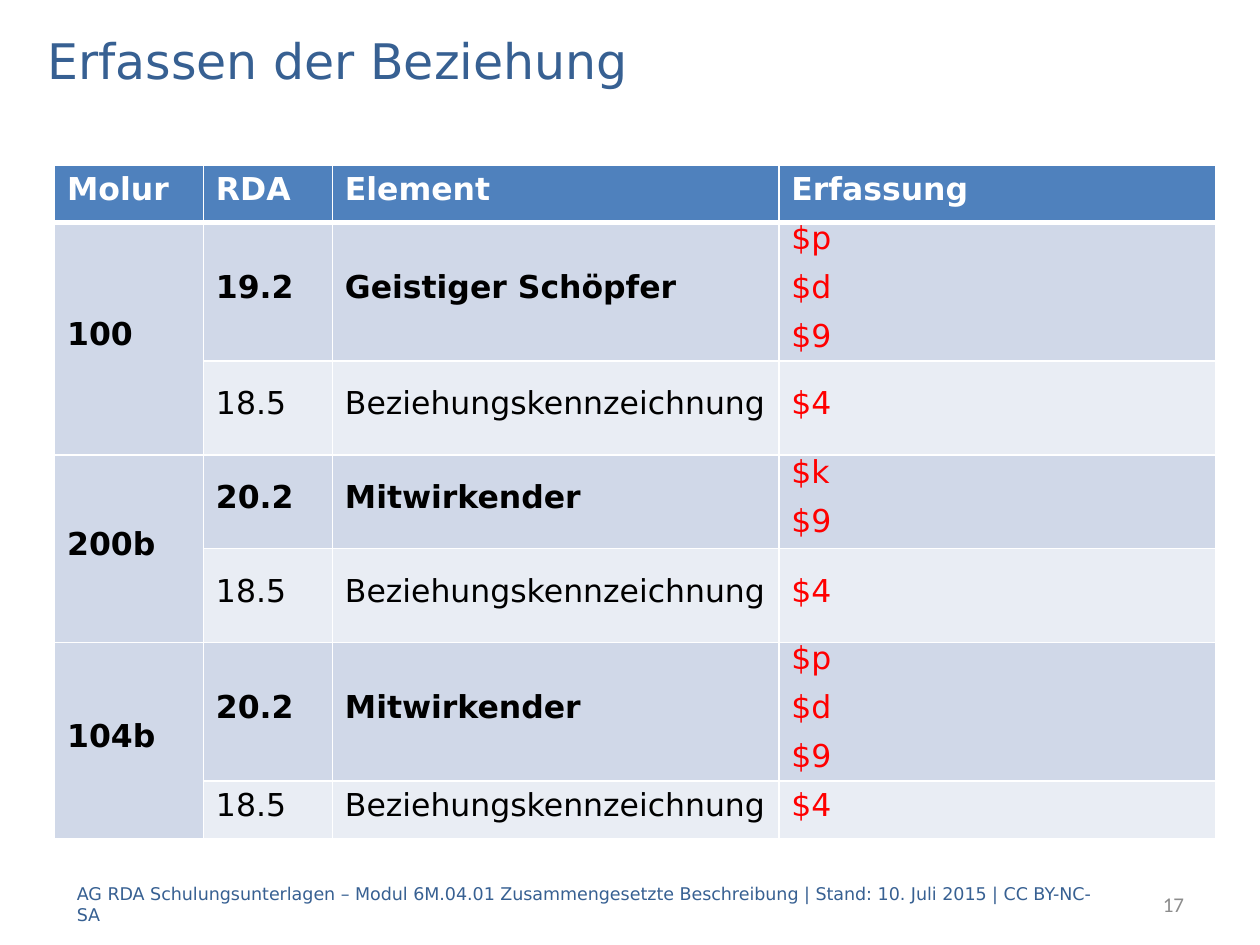
from pptx import Presentation
from pptx.dml.color import RGBColor
from pptx.enum.text import MSO_ANCHOR, PP_ALIGN
from pptx.oxml import parse_xml
from pptx.oxml.ns import nsdecls
from pptx.util import Cm, Pt

SANS = "DejaVu Sans"
NAVY, BLUE, RED = "376092", "4F81BD", "FF0000"
WHITE, BLACK, GREY = "FFFFFF", "000000", "8C8C8C"
DARK, LIGHT = "D0D8E8", "E9EDF4"

HEAD = ["Molur", "RDA", "Element", "Erfassung"]
GROUPS = [
    ("100", "19.2", "Geistiger Schöpfer", "$p\n$d\n$9"),
    ("200b", "20.2", "Mitwirkender", "$k\n$9"),
    ("104b", "20.2", "Mitwirkender", "$p\n$d\n$9"),
]
LINK = ("18.5", "Beziehungskennzeichnung", "$4")
WIDTHS = [3, 2.6, 9, 8.8]
HEIGHTS = [1.16, 2.79, 1.89, 1.89, 1.89, 2.79, 1.17]


def color(code):
    return RGBColor.from_string(code)


def write(frame, text, size=18, font=SANS, ink=BLACK, bold=False,
          align=PP_ALIGN.LEFT, line=None, gap=None):
    frame.word_wrap = True
    for i, part in enumerate(text.split("\n")):
        para = frame.paragraphs[0] if i == 0 else frame.add_paragraph()
        para.alignment = align
        if line:
            para.line_spacing = Pt(line)
        if gap:
            para.space_before = para.space_after = Pt(gap)
        run = para.add_run()
        run.text = part
        run.font.size = Pt(size)
        run.font.name = font
        run.font.bold = bold
        run.font.color.rgb = color(ink)


def label(slide, box, text, **form):
    frame = slide.shapes.add_textbox(*map(Cm, box)).text_frame
    frame.vertical_anchor = MSO_ANCHOR.MIDDLE
    write(frame, text, **form)


def paint(cell, fill, top=1, base=1):
    props = cell._tc.get_or_add_tcPr()
    for side, width in zip("LRTB", (1, 1, top, base)):
        props.append(parse_xml(
            f'<a:ln{side} {nsdecls("a")} w="{Pt(width)}"><a:solidFill>'
            f'<a:srgbClr val="{WHITE}"/></a:solidFill></a:ln{side}>'))
    cell.fill.solid()
    cell.fill.fore_color.rgb = color(fill)


def entry(cell, text, fill, top=1, **form):
    paint(cell, fill, top=top)
    cell.vertical_anchor = MSO_ANCHOR.MIDDLE
    cell.margin_top = cell.margin_bottom = 0
    write(cell.text_frame, text, line=16, gap=6, **form)


def grid(slide, box):
    table = slide.shapes.add_table(
        len(HEIGHTS), len(WIDTHS), *map(Cm, box)).table
    table.horz_banding = False
    for col, width in zip(table.columns, WIDTHS):
        col.width = Cm(width)
    for row, height in zip(table.rows, HEIGHTS):
        row.height = Cm(height)
    for c, text in enumerate(HEAD):
        cell = table.cell(0, c)
        paint(cell, BLUE, base=3)
        write(cell.text_frame, text, ink=WHITE, bold=True)
    for g, group in enumerate(GROUPS):
        r = 1 + 2 * g
        top = 3 if g == 0 else 1
        for c, text in enumerate(group):
            last = c == 3
            entry(table.cell(r, c), text, DARK, top=top,
                  ink=RED if last else BLACK, bold=not last)
        for c, text in enumerate(LINK, 1):
            entry(table.cell(r + 1, c), text, LIGHT,
                  ink=RED if c == 3 else BLACK)
        paint(table.cell(r + 1, 0), DARK)
        table.cell(r, 0).merge(table.cell(r + 1, 0))


def footer(slide, box):
    left, top, width, height = box
    label(slide, (left + width - 4.04, top, 4.04, height), "17", size=12,
          font="Calibri", ink=GREY, align=PP_ALIGN.RIGHT)
    label(slide, (left, top, 21.2, height),
          "AG RDA Schulungsunterlagen – Modul 6M.04.01 Zusammengesetzte "
          "Beschreibung | Stand: 10. Juli 2015 | CC BY-NC-SA",
          size=10, ink=NAVY)


def main():
    deck = Presentation()
    deck.slide_width, deck.slide_height = Cm(25.4), Cm(19.05)
    slide = deck.slides.add_slide(deck.slide_layouts[6])
    grid(slide, (1.1, 3.33, sum(WIDTHS), sum(HEIGHTS)))
    label(slide, (0.71, 0.49, 24, 1.42), "Erfassen der Beziehung",
          size=28, ink=NAVY)
    footer(slide, (1.3, 17.72, 22.82, 1.02))
    deck.save("out.pptx")


if __name__ == "__main__":
    main()
